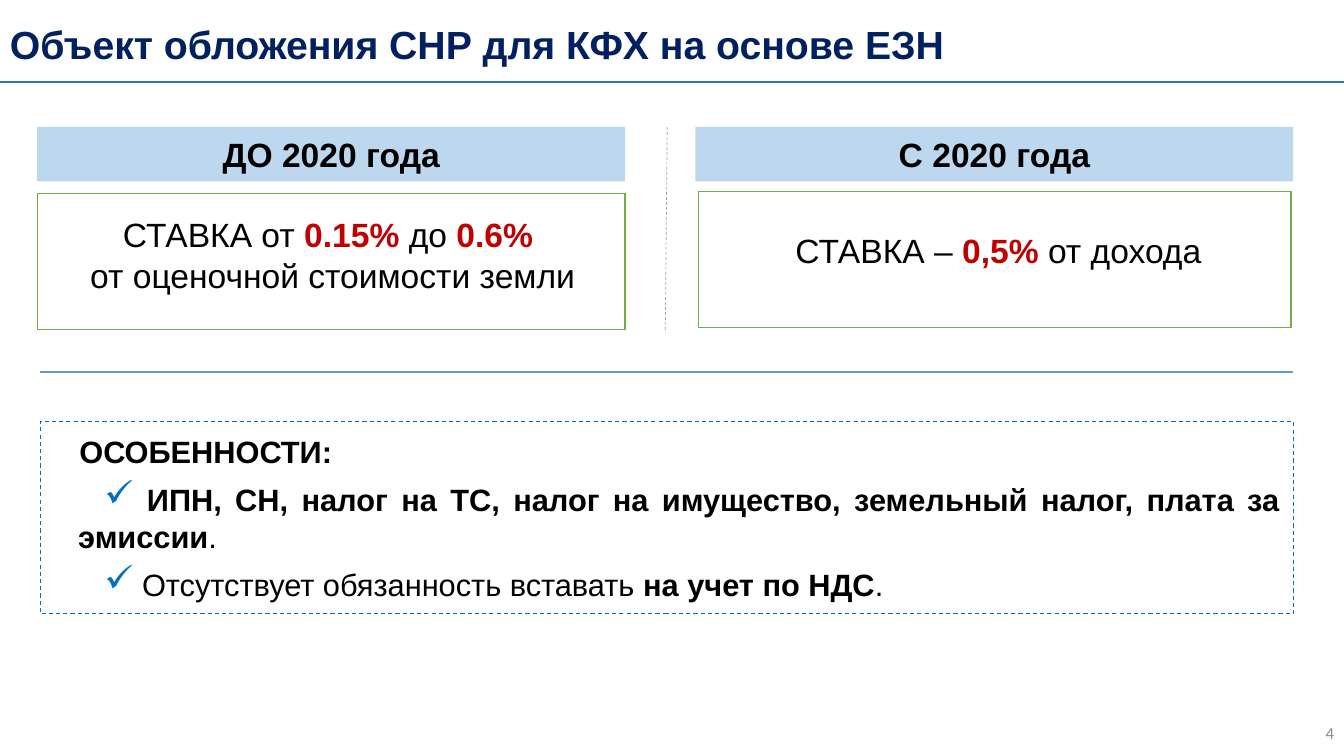
from lxml import etree
from pptx import Presentation
from pptx.dml.color import RGBColor
from pptx.enum.dml import MSO_LINE
from pptx.enum.shapes import MSO_CONNECTOR, MSO_SHAPE
from pptx.enum.text import MSO_ANCHOR, PP_ALIGN
from pptx.oxml.ns import qn
from pptx.util import Pt

LEFT, MID, RIGHT, JUST = (PP_ALIGN.LEFT, PP_ALIGN.CENTER,
                          PP_ALIGN.RIGHT, PP_ALIGN.JUSTIFY)
TOP, CENTER = MSO_ANCHOR.TOP, MSO_ANCHOR.MIDDLE
RECT, STRAIGHT, DASH = MSO_SHAPE.RECTANGLE, MSO_CONNECTOR.STRAIGHT, MSO_LINE.DASH

BLACK = RGBColor(0x00, 0x00, 0x00)
WHITE = RGBColor(0xFF, 0xFF, 0xFF)
NAVY = RGBColor(0x00, 0x20, 0x60)
BLUE = RGBColor(0x00, 0x70, 0xC0)
RULE = RGBColor(0x2E, 0x75, 0xB6)
SKY = RGBColor(0x5B, 0x9B, 0xD5)
PALE = RGBColor(0xBD, 0xD7, 0xEE)
GREEN = RGBColor(0x70, 0xAD, 0x47)
RED = RGBColor(0xC0, 0x00, 0x00)
GREY = RGBColor(0xA6, 0xA6, 0xA6)
DIM = RGBColor(0x89, 0x89, 0x89)

WIDE, HIGH = 960, 540
INSET = (9.6, 4.8)


# Basic parts
def add_run(para, text, size, color=BLACK, bold=False, face="Arial"):
    run = para.add_run()
    run.text = text
    font = run.font
    font.size, font.bold, font.name = Pt(size), bold, face
    font.color.rgb = color


def set_frame(shape, anchor, inset=INSET):
    frame = shape.text_frame
    frame.word_wrap = True
    frame.vertical_anchor = anchor
    frame.margin_left = frame.margin_right = Pt(inset[0])
    frame.margin_top = frame.margin_bottom = Pt(inset[1])
    return frame


def add_text(slide, box, align, anchor=TOP, inset=INSET):
    shape = slide.shapes.add_textbox(*map(Pt, box))
    para = set_frame(shape, anchor, inset).paragraphs[0]
    para.alignment = align
    return para


def add_box(slide, box, fill=None, line=None, width=1):
    shape = slide.shapes.add_shape(RECT, *map(Pt, box))
    shape.shadow.inherit = False
    if fill is None:
        shape.fill.background()
    else:
        shape.fill.solid()
        shape.fill.fore_color.rgb = fill
    if line is None:
        shape.line.fill.background()
    else:
        shape.line.color.rgb = line
        shape.line.width = Pt(width)
    return shape


def add_line(slide, ends, color, width, dash=None):
    line = slide.shapes.add_connector(STRAIGHT, *map(Pt, ends))
    line.line.color.rgb = color
    line.line.width = Pt(width)
    if dash is not None:
        line.line.dash_style = dash
    etree.SubElement(line._element.spPr, qn("a:effectLst"))


def set_indent(para, left, first, mark=None):
    props = para._p.get_or_add_pPr()
    props.set("marL", str(Pt(left)))
    props.set("indent", str(Pt(first)))
    if mark:
        color = etree.SubElement(props, qn("a:buClr"))
        etree.SubElement(color, qn("a:srgbClr"), val=str(BLUE))
        etree.SubElement(props, qn("a:buSzPct"), val="120000")
        etree.SubElement(props, qn("a:buChar"), char=mark)


# Title with its rule
def add_title(slide, box, text):
    x, y, w, h = box
    para = add_text(slide, box, LEFT, inset=(7.2, 3.6))
    add_run(para, text, 28, NAVY, True)
    add_line(slide, (x, y + 47.5, x + w, y + 47.5), RULE, 1.5)


# One period: heading band, framed rate; offsets are from the band
def add_period(slide, box, head, frame, note, lines):
    x, y, w, h = box
    band = add_box(slide, box, PALE)
    para = set_frame(band, CENTER).paragraphs[0]
    para.alignment = MID
    add_run(para, head, 24, bold=True)

    dx, dy, wide = frame
    add_box(slide, (x + dx, y + dy, wide, 97.2), WHITE, GREEN)

    dx, dy, wide, high = note
    para = add_text(slide, (x + dx, y + dy, wide, high), MID)
    for i, line in enumerate(lines):
        if i:
            para.add_line_break()
        for text, strong in line:
            add_run(para, text, 24, RED if strong else BLACK, strong)


# Dashed box with the check list
def add_list(slide, box, head, items):
    shape = add_box(slide, box, line=BLUE, width=0.75)
    shape.line.dash_style = DASH
    frame = set_frame(shape, CENTER)
    for i, runs in enumerate([[(head, True)]] + items):
        para = frame.add_paragraph() if i else frame.paragraphs[0]
        para.alignment = JUST
        para.space_after = Pt(8)
        if i:
            set_indent(para, 17.5, 18.7, "✓")
        else:
            set_indent(para, 18.3, 0)
        for text, bold in runs:
            add_run(para, text, 22, bold=bold)


def main():
    deck = Presentation()
    deck.slide_width, deck.slide_height = Pt(WIDE), Pt(HIGH)
    slide = deck.slides.add_slide(deck.slide_layouts[6])

    add_title(slide, (0, 10.8, WIDE, 41),
              "Объект обложения СНР для КФХ на основе ЕЗН")

    # Rates before and since 2020
    add_period(slide, (26.6, 90.7, 420, 38.9), "ДО 2020 года",
               (0, 47.5, 420), (2.2, 57.6, 417.6, 67.7),
               [[("СТАВКА от ", False), ("0.15% ", True),
                 ("до ", False), ("0.6% ", True)],
                [("от оценочной стоимости земли", False)]])
    add_period(slide, (496.8, 90.7, 427, 38.9), "С 2020 года",
               (2, 46.1, 423.4), (9.4, 68.4, 420.5, 38.9),
               [[("СТАВКА – ", False), ("0,5% ", True),
                 ("от дохода ", False)]])
    add_line(slide, (476.6, 90.7, 475.2, 237.6), GREY, 0.5, DASH)
    add_line(slide, (923.8, 265.7, 28.8, 265.7), SKY, 1)

    add_list(slide, (28.8, 301, 895, 137.5), "ОСОБЕННОСТИ:", [
        [(" ИПН, СН, налог на ТС, налог на имущество, "
          "земельный налог, плата за эмиссии", True), (".", False)],
        [(" Отсутствует обязанность вставать ", False),
         ("на учет по НДС", True), (".", False)]])

    # Page number
    para = add_text(slide, (744, 509, 216, 28.8), RIGHT, CENTER, (7.2, 3.6))
    add_run(para, "4", 12, DIM, face="Calibri")

    deck.save("out.pptx")


if __name__ == "__main__":
    main()
